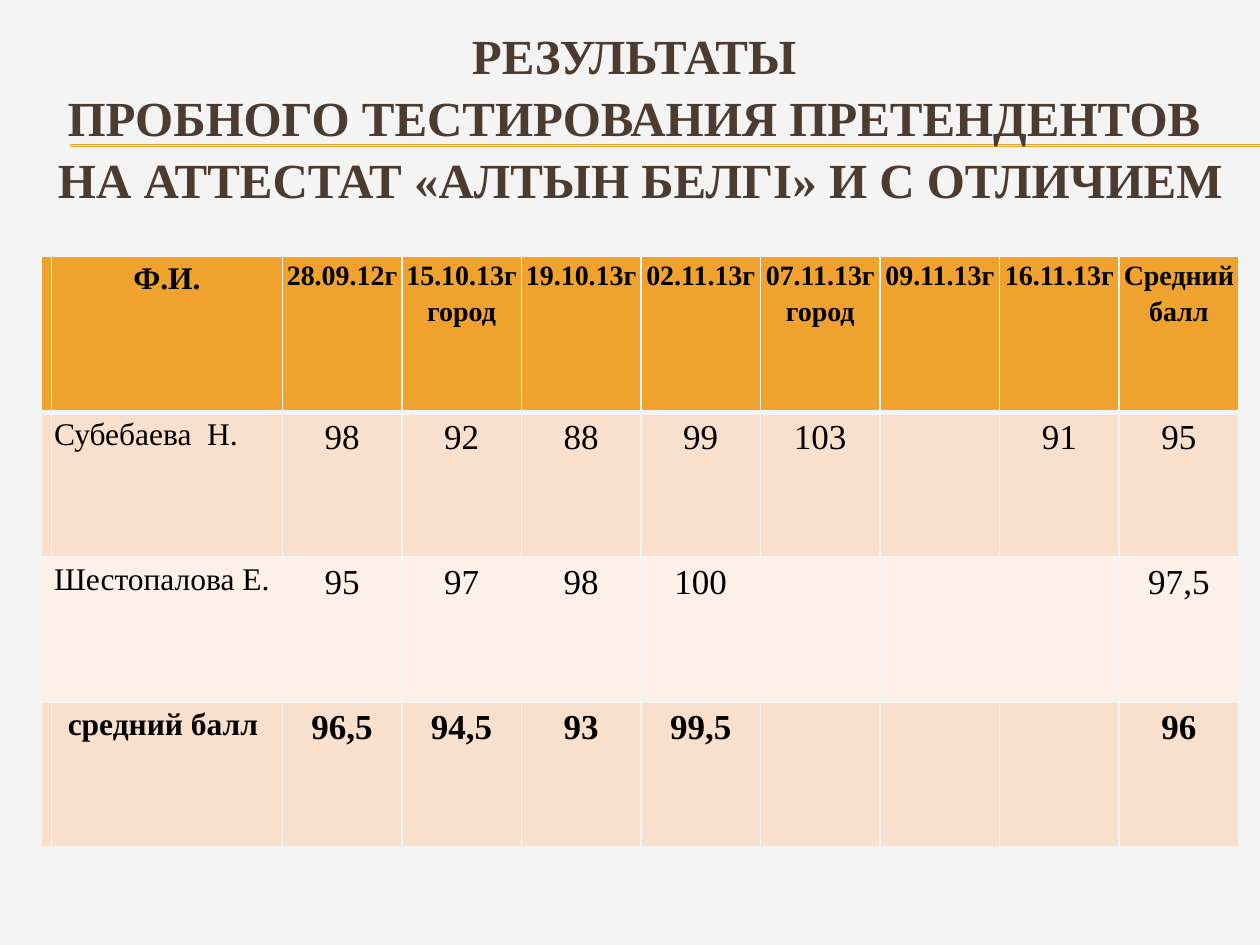
from lxml.etree import SubElement
from pptx import Presentation
from pptx.dml.color import RGBColor
from pptx.enum.shapes import MSO_CONNECTOR as Connector
from pptx.enum.text import MSO_ANCHOR as Anchor, MSO_AUTO_SIZE as AutoSize, PP_ALIGN as Align
from pptx.oxml.ns import qn
from pptx.util import Cm, Pt

PAPER = RGBColor(0xF4, 0xF4, 0xF4)
ORANGE = RGBColor(0xF0, 0xA2, 0x2E)
BROWN = RGBColor(0x4E, 0x3B, 0x30)
BLACK = RGBColor(0, 0, 0)
BAND_DARK = RGBColor(0xF9, 0xE0, 0xCD)
BAND_LIGHT = RGBColor(0xFC, 0xF0, 0xE8)
FONT = "Times New Roman"

TITLE = ["РЕЗУЛЬТАТЫ ",
         "ПРОБНОГО ТЕСТИРОВАНИЯ ПРЕТЕНДЕНТОВ ",
         "НА АТТЕСТАТ «АЛТЫН БЕЛГІ» И С ОТЛИЧИЕМ"]
RESULTS = [
    ["", "Ф.И.", "28.09.12г", "15.10.13г\nгород", "19.10.13г", "02.11.13г",
     "07.11.13г\nгород", "09.11.13г", "16.11.13г", "Средний балл"],
    ["", "Субебаева  Н.", "98", "92", "88", "99", "103", "", "91", "95"],
    ["", "Шестопалова Е.", "95", "97", "98", "100", "", "", "", "97,5"],
    ["", "средний балл ", "96,5", "94,5", "93", "99,5", "", "", "", "96"],
]
ROW_FILLS = [ORANGE, BAND_DARK, BAND_LIGHT, BAND_DARK]
COL_WIDTHS = [0.18, 4.65] + [2.41] * 8
ROW_HEIGHTS = [3.15] + [2.92] * 3


class SlideBuilder:
    def __init__(self, slide, font):
        self.slide = slide
        self.font = font

    def background(self, color):
        fill = self.slide.background.fill
        fill.solid()
        fill.fore_color.rgb = color

    def run(self, p, text, size, color, bold):
        r = p.add_run()
        r.text = text
        r.font.name = self.font
        r.font.size = Pt(size)
        r.font.bold = bold
        r.font.color.rgb = color

    def rule(self, left, right, y):
        sp = self.slide.shapes.add_connector(
            Connector.STRAIGHT, Cm(left), Cm(y), Cm(right), Cm(y))
        sp.line.color.rgb = ORANGE
        sp.line.width = Pt(0.75)
        SubElement(sp._element.spPr, qn("a:effectLst"))

    def title(self, lines, left, top, width, height):
        sp = self.slide.shapes.title
        sp.left, sp.top, sp.width, sp.height = Cm(left), Cm(top), Cm(width), Cm(height)
        tf = sp.text_frame
        tf.word_wrap = True
        tf.auto_size = AutoSize.NONE
        tf.vertical_anchor = Anchor.MIDDLE
        tf.margin_left = tf.margin_right = tf.margin_top = tf.margin_bottom = 0
        p = tf.paragraphs[0]
        p.alignment = Align.CENTER
        p.line_spacing = 1.05
        for i, line in enumerate(lines):
            if i:
                p.add_line_break()
            self.run(p, line, 28, BROWN, True)
        # Keep the title in front of the rules
        self.slide.shapes._spTree.append(sp._element)

    def borders(self, cell, top, bottom):
        tc_pr = cell._tc.get_or_add_tcPr()
        for side, width in (("L", 1), ("R", 1), ("T", top), ("B", bottom)):
            ln = SubElement(tc_pr, qn(f"a:ln{side}"), w=str(Pt(width)))
            fill = SubElement(ln, qn("a:solidFill"))
            SubElement(fill, qn("a:srgbClr"), val=str(PAPER))

    def cell(self, cell, text, fill, size, bold, align):
        cell.margin_left = cell.margin_right = Cm(0.05)
        cell.margin_top = cell.margin_bottom = 0
        cell.fill.solid()
        cell.fill.fore_color.rgb = fill
        if not text:
            return
        tf = cell.text_frame
        for i, line in enumerate(text.split("\n")):
            p = tf.add_paragraph() if i else tf.paragraphs[0]
            p.alignment = align
            p.line_spacing = 1.15
            self.run(p, line, size, BLACK, bold)

    def table(self, rows, left, top):
        table = self.slide.shapes.add_table(
            len(rows), len(COL_WIDTHS), Cm(left), Cm(top),
            Cm(sum(COL_WIDTHS)), Cm(sum(ROW_HEIGHTS))).table
        table.horz_banding = False
        for col, width in zip(table.columns, COL_WIDTHS):
            col.width = Cm(width)
        last = len(rows) - 1
        for i, row in enumerate(rows):
            table.rows[i].height = Cm(ROW_HEIGHTS[i])
            for j, text in enumerate(row):
                cell = table.cell(i, j)
                is_name = j == 1
                size = 18 if is_name else 16 if i == 0 else 20
                bold = i in (0, last)
                align = Align.LEFT if is_name and not bold else Align.CENTER
                self.borders(cell, 3 if i == 1 else 1, 3 if i == 0 else 1)
                self.cell(cell, text, ROW_FILLS[i], size, bold, align)


def main():
    prs = Presentation()
    prs.slide_width, prs.slide_height = Cm(25.4), Cm(19.05)
    builder = SlideBuilder(prs.slides.add_slide(prs.slide_layouts[5]), FONT)
    builder.background(PAPER)

    # Double rule and heading
    for y in (2.92, 2.95):
        builder.rule(1.42, 25.4, y)
    builder.title(TITLE, 0.84, 1.27, 24.13, 2.11)

    # Test results
    builder.table(RESULTS, 0.84, 5.16)
    prs.save("out.pptx")


if __name__ == "__main__":
    main()
